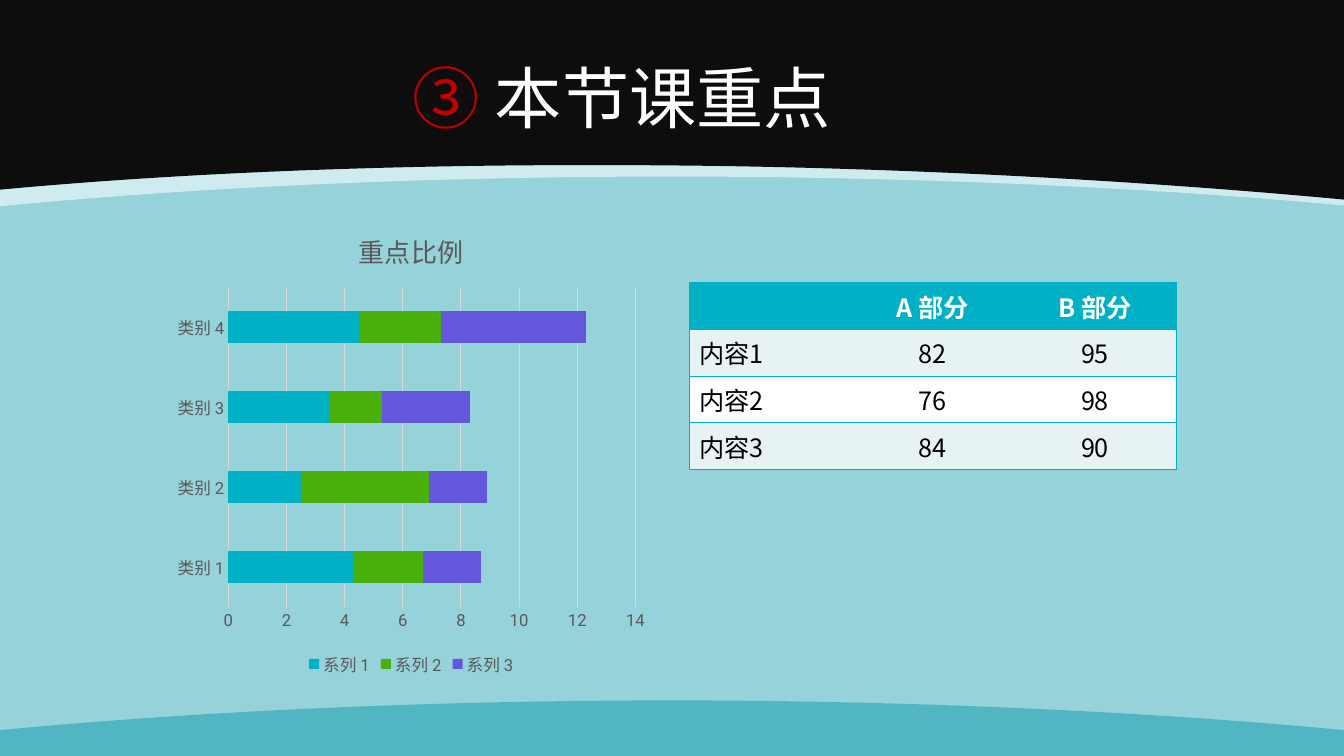
from dataclasses import dataclass

from lxml.etree import SubElement
from pptx import Presentation
from pptx.chart.data import CategoryChartData
from pptx.dml.color import RGBColor
from pptx.enum.chart import XL_CHART_TYPE as ChartType
from pptx.enum.chart import XL_LEGEND_POSITION as LegendPosition
from pptx.enum.chart import XL_TICK_MARK as TickMark
from pptx.enum.text import MSO_ANCHOR as Anchor
from pptx.enum.text import PP_ALIGN as Align
from pptx.oxml.ns import qn
from pptx.util import Cm, Pt


@dataclass(frozen=True)
class Theme:
    background: str = "96D2DA"
    header: str = "0D0D0D"
    header_rim: str = "EAF6F8"
    footer: str = "52B5C2"
    white: str = "FFFFFF"
    black: str = "000000"
    number: str = "C00000"
    accent: str = "00B1C5"
    band: str = "E7F2F5"
    chart_text: str = "595959"
    grid: str = "D9D9D9"
    series: tuple = ("00B1C5", "49AF0A", "6457DB")
    font: str = "Noto Sans CJK SC"
    chart_font: str = "Roboto"
    title_size: float = 48
    table_size: float = 18
    chart_title_size: float = 18.6
    chart_size: float = 11.9
    line_width: float = 1
    grid_width: float = 0.75
    table_style: str = "{2D5ABB26-0587-4C30-8999-92F81FD0307C}"


THEME = Theme()
WIDTH, HEIGHT = 33.87, 19.05


def color(value):
    return RGBColor.from_string(value)


def style_font(font, size, value, name=THEME.font, bold=False):
    font.size = Pt(size)
    font.bold = bold
    font.name = name
    font.color.rgb = color(value)


def set_east_asian(paragraph):
    for run in paragraph.runs:
        SubElement(run._r.get_or_add_rPr(), qn("a:ea"), typeface=THEME.font)


def bend(segment, controls, top):
    end = segment[0]
    segment.tag = qn("a:cubicBezTo")
    for x, y in controls:
        SubElement(segment, qn("a:pt"), x=str(Cm(x)), y=str(Cm(y) - top))
    segment.append(end)


def add_wave(slide, edge_y, left_y, middle_y, right_y, shoulders, fill, opacity=100):
    inner_left, near_left, near_right, inner_right = zip((4.93, 10.74, 22.9, 28.96), shoulders)
    corners = ((WIDTH, edge_y), (WIDTH, right_y), (16.97, middle_y), (0, left_y))
    builder = slide.shapes.build_freeform(0, Cm(edge_y), scale=1.0)
    builder.add_line_segments([(Cm(x), Cm(y)) for x, y in corners], close=True)
    wave = builder.convert_to_shape()
    segments = list(wave._element.iter(qn("a:lnTo")))
    bend(segments[2], (inner_right, near_right), wave.top)
    bend(segments[3], (near_left, inner_left), wave.top)
    wave.shadow.inherit = False
    wave.line.fill.background()
    wave.fill.solid()
    wave.fill.fore_color.rgb = color(fill)
    if opacity < 100:
        fill_color = wave._element.spPr.find(f".//{qn('a:srgbClr')}")
        SubElement(fill_color, qn("a:alpha"), val=str(opacity * 1000))


def add_backdrop(slide):
    slide.background.fill.solid()
    slide.background.fill.fore_color.rgb = color(THEME.background)
    add_wave(slide, 0, 5.2, 4.45, 5.18, (4.72, 4.45, 4.45, 4.72), THEME.header_rim, 70)
    add_wave(slide, 0, 4.78, 4.17, 5.03, (4.32, 4.11, 4.22, 4.57), THEME.header)
    add_wave(slide, HEIGHT, 18.4, 17.65, 18.4, (17.93, 17.65, 17.65, 17.93), THEME.footer)


def add_title(slide, left, top, width, height):
    frame = slide.shapes.add_textbox(Cm(left), Cm(top), Cm(width), Cm(height)).text_frame
    frame.word_wrap = True
    frame.vertical_anchor = Anchor.BOTTOM
    paragraph = frame.paragraphs[0]
    paragraph.text = " 本节课重点"
    paragraph.line_spacing = 0.9
    properties = paragraph._p.get_or_add_pPr()
    properties.set("marL", str(Cm(1.43)))
    properties.set("indent", str(-Cm(1.43)))
    bullet_color = SubElement(properties, qn("a:buClr"))
    SubElement(bullet_color, qn("a:srgbClr"), val=THEME.number)
    SubElement(properties, qn("a:buFont"), typeface=THEME.font)
    SubElement(properties, qn("a:buAutoNum"), type="circleNumDbPlain", startAt="3")
    style_font(paragraph.font, THEME.title_size, THEME.white)
    set_east_asian(paragraph)


def add_share_chart(slide, left, top, width, height):
    data = CategoryChartData()
    data.categories = [f"类别 {number}" for number in range(1, 5)]
    data.add_series("系列 1", (4.3, 2.5, 3.5, 4.5))
    data.add_series("系列 2", (2.4, 4.4, 1.8, 2.8))
    data.add_series("系列 3", (2, 2, 3, 5))
    chart = slide.shapes.add_chart(
        ChartType.BAR_STACKED, Cm(left), Cm(top), Cm(width), Cm(height), data
    ).chart
    style_font(chart.font, THEME.chart_size, THEME.chart_text, THEME.chart_font)

    chart.has_title = True
    title = chart.chart_title.text_frame.paragraphs[0]
    title.text = "重点比例"
    style_font(title.font, THEME.chart_title_size, THEME.chart_text, THEME.chart_font)
    chart.chart_title.include_in_layout = False

    chart.has_legend = True
    chart.legend.position = LegendPosition.BOTTOM
    chart.legend.include_in_layout = False

    for axis in (chart.category_axis, chart.value_axis):
        axis.major_tick_mark = axis.minor_tick_mark = TickMark.NONE
    category_line = chart.category_axis.format.line
    chart.value_axis.format.line.fill.background()
    chart.value_axis.has_major_gridlines = True
    for line in (category_line, chart.value_axis.major_gridlines.format.line):
        line.color.rgb = color(THEME.grid)
        line.width = Pt(THEME.grid_width)

    plot = chart.plots[0]
    plot.gap_width = 150
    plot.overlap = 100
    plot.vary_by_categories = False
    for series, fill in zip(plot.series, THEME.series):
        series.format.fill.solid()
        series.format.fill.fore_color.rgb = color(fill)


def add_borders(cell, sides):
    properties = cell._tc.get_or_add_tcPr()
    for position, side in enumerate(sides):
        border = SubElement(properties, qn(f"a:ln{side}"), w=str(Pt(THEME.line_width)))
        fill = SubElement(border, qn("a:solidFill"))
        SubElement(fill, qn("a:srgbClr"), val=THEME.accent)
        properties.insert(position, border)


def add_score_table(slide, left, top, width, height):
    rows = (
        ("", "A 部分", "B 部分"),
        ("内容1", "82", "95"),
        ("内容2", "76", "98"),
        ("内容3", "84", "90"),
    )
    last_column = len(rows[0]) - 1
    table = slide.shapes.add_table(
        len(rows), len(rows[0]), Cm(left), Cm(top), Cm(width), Cm(height)
    ).table
    table._tbl.tblPr.find(qn("a:tableStyleId")).text = THEME.table_style
    for row_index, row in enumerate(rows):
        heading = row_index == 0
        fill = THEME.accent if heading else (THEME.white, THEME.band)[row_index % 2]
        for column_index, text in enumerate(row):
            cell = table.cell(row_index, column_index)
            cell.fill.solid()
            cell.fill.fore_color.rgb = color(fill)
            cell.vertical_anchor = Anchor.MIDDLE
            paragraph = cell.text_frame.paragraphs[0]
            paragraph.text = text
            paragraph.alignment = Align.CENTER if column_index else Align.LEFT
            text_color = THEME.white if heading else THEME.black
            style_font(paragraph.font, THEME.table_size, text_color, bold=heading)
            set_east_asian(paragraph)
            outer = {0: "L", last_column: "R"}.get(column_index, "")
            add_borders(cell, [*outer, "T", "B"])


def main():
    presentation = Presentation()
    presentation.slide_width, presentation.slide_height = Cm(WIDTH), Cm(HEIGHT)
    slide = presentation.slides.add_slide(presentation.slide_layouts[6])
    add_backdrop(slide)
    add_title(slide, 10.15, 1.12, 11.71, 2.49)
    add_share_chart(slide, 4.23, 5.29, 12.27, 11.86)
    add_score_table(slide, 17.37, 7.13, 12.27, 4.7)
    presentation.save("out.pptx")


if __name__ == "__main__":
    main()
